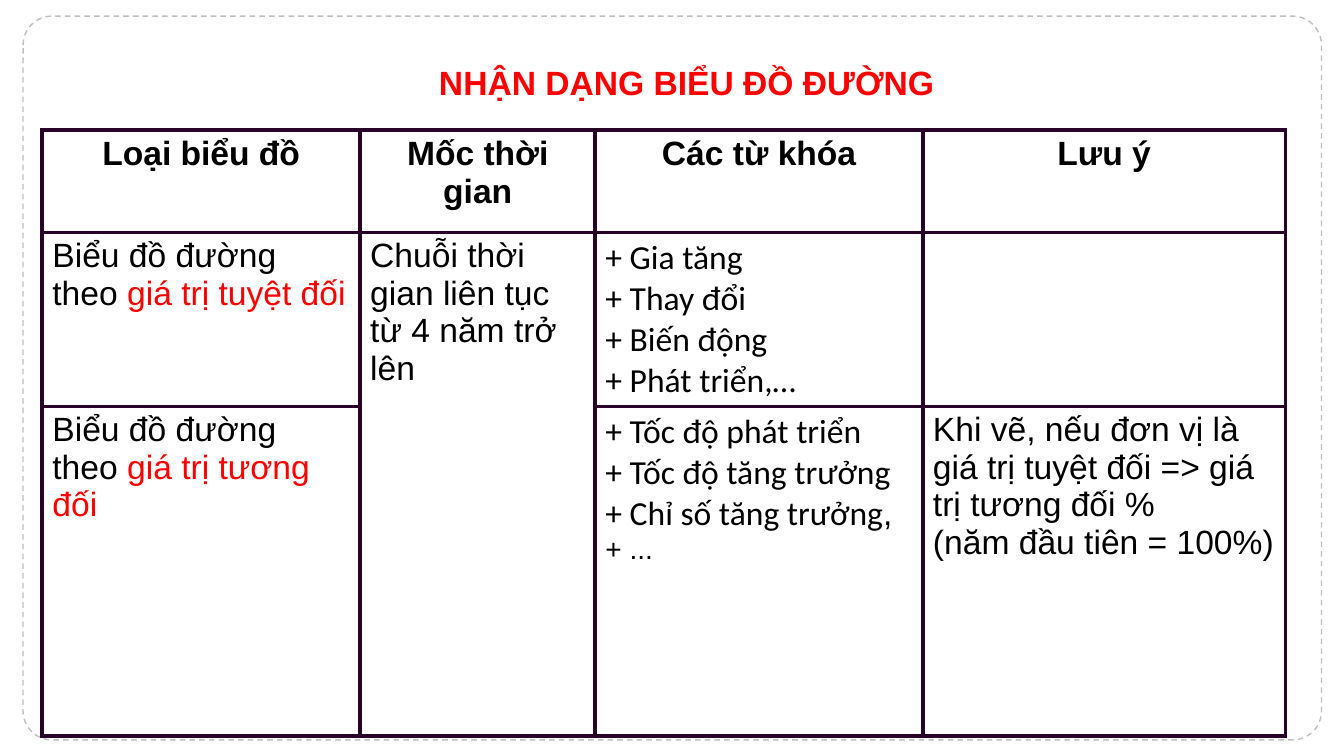
from lxml.etree import SubElement
from pptx import Presentation
from pptx.dml.color import RGBColor
from pptx.enum.dml import MSO_LINE
from pptx.enum.shapes import MSO_SHAPE
from pptx.enum.text import MSO_AUTO_SIZE, PP_ALIGN
from pptx.oxml.ns import qn
from pptx.util import Pt

RED, BLACK, WHITE = "FF0000", "000000", "FFFFFF"
HEAD = {"bold": True}
KEY = {"name": "Calibri"}
HOT = {"color": RED}

# A cell is a list of paragraphs; a paragraph is a list of (text, format) runs.
HEADS = ["Loại biểu đồ", "Mốc thời gian", "Các từ khóa", "Lưu ý"]
ROWS = [
    [[[(head, HEAD)]] for head in HEADS],
    [
        [[("Biểu đồ đường theo ", {}), ("giá trị tuyệt đối", HOT)]],
        [[("Chuỗi thời gian liên tục từ 4 năm trở lên", {})]],
        [[("+ " + word, KEY)] for word in
         ("Gia tăng", "Thay đổi", "Biến động", "Phát triển,…")],
        [],
    ],
    [
        [[("Biểu đồ đường theo ", {}), ("giá trị tương đối", HOT)]],
        [],
        [
            [("+ Tốc độ phát triển", KEY)],
            [("+ Tốc độ tăng trưởng", KEY)],
            [("+ Chỉ số tăng trưởng", KEY), (",", {})],
            [("+ ...", {"size": Pt(20)})],
        ],
        [
            [("Khi vẽ, nếu đơn vị là giá trị tuyệt đối => giá trị tương đối %", {})],
            [("(năm đầu tiên = 100%)", {})],
        ],
    ],
]


def paint(hue):
    return RGBColor.from_string(hue)


class Deck:
    base = {"name": "Arial", "size": Pt(24), "bold": False, "color": BLACK}
    edge = "280228"

    def __init__(self, wide, high):
        self.show = Presentation()
        self.show.slide_width, self.show.slide_height = Pt(wide), Pt(high)
        self.slide = self.show.slides.add_slide(self.show.slide_layouts[6])

    def words(self, frame, paras, align=PP_ALIGN.LEFT):
        """Fill a text frame with paragraphs of formatted runs."""
        for i, runs in enumerate(paras):
            para = frame.add_paragraph() if i else frame.paragraphs[0]
            para.alignment = align
            for text, form in runs:
                run = para.add_run()
                run.text = text
                style = {**self.base, **form}
                run.font.color.rgb = paint(style.pop("color"))
                for key, value in style.items():
                    setattr(run.font, key, value)

    def frame(self, *box):
        """Draw the dashed rounded outline around the slide."""
        shape = self.slide.shapes.add_shape(
            MSO_SHAPE.ROUNDED_RECTANGLE, *map(Pt, box))
        shape.shadow.inherit = False
        shape.adjustments[0] = 0.04
        shape.fill.background()
        shape.line.color.rgb = paint("BFBFBF")
        shape.line.width = Pt(1)
        shape.line.dash_style = MSO_LINE.DASH

    def title(self, text, *box):
        frame = self.slide.shapes.add_textbox(*map(Pt, box)).text_frame
        frame.word_wrap = True
        frame.auto_size = MSO_AUTO_SIZE.SHAPE_TO_FIT_TEXT
        self.words(frame, [[(text, {**HEAD, **HOT})]])

    def border(self, cell):
        props = cell._tc.get_or_add_tcPr()
        for side in "LRTB":
            line = SubElement(props, qn("a:ln" + side), w=str(Pt(3)))
            fill = SubElement(line, qn("a:solidFill"))
            SubElement(fill, qn("a:srgbClr"), val=self.edge)

    def table(self, left, top, wides, highs, rows):
        table = self.slide.shapes.add_table(
            len(highs), len(wides), Pt(left), Pt(top),
            Pt(sum(wides)), Pt(sum(highs))).table
        table.first_row = table.horz_banding = False
        for col, wide in zip(table.columns, wides):
            col.width = Pt(wide)
        for row, high in zip(table.rows, highs):
            row.height = Pt(high)
        for r, row in enumerate(rows):
            for c, paras in enumerate(row):
                cell = table.cell(r, c)
                self.border(cell)
                cell.fill.solid()
                cell.fill.fore_color.rgb = paint(WHITE)
                self.words(cell.text_frame, paras,
                           PP_ALIGN.LEFT if r else PP_ALIGN.CENTER)
        return table


def main():
    deck = Deck(960, 540)
    deck.frame(16.5, 11.5, 927.5, 517)
    table = deck.table(30.25, 93, [227, 168, 234, 259], [73, 105, 235.5], ROWS)
    table.cell(1, 1).merge(table.cell(2, 1))
    deck.title("NHẬN DẠNG BIỂU ĐỒ ĐƯỜNG", 306.5, 41, 417.5, 36)
    deck.show.save("out.pptx")


if __name__ == "__main__":
    main()
